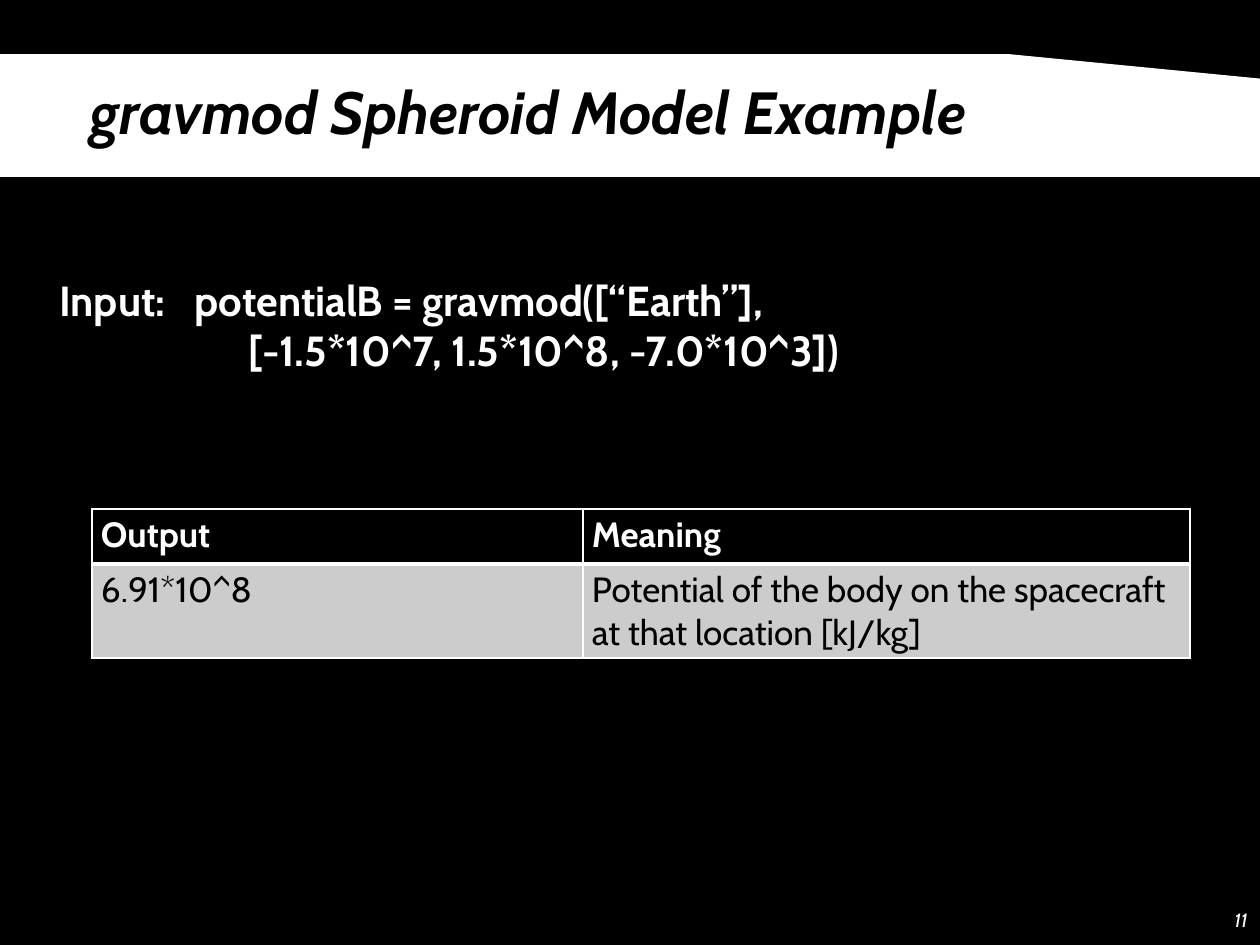
from lxml.etree import SubElement
from pptx import Presentation
from pptx.dml.color import RGBColor
from pptx.enum.shapes import MSO_SHAPE
from pptx.enum.text import MSO_ANCHOR, MSO_AUTO_SIZE, PP_ALIGN
from pptx.oxml.ns import qn
from pptx.util import Pt

PX = 914400 // 126
FONT = "Cabin"
BLACK, WHITE, GREY = "000000", "FFFFFF", "CCCCCC"

TITLE = "gravmod Spheroid Model Example"
PAGE_NUMBER = "11"
# text, left indent and tab stop in px
INPUT_LINES = [
    ("Input:\t potentialB = gravmod([“Earth”],", 0, 126),
    ("[-1.5*10^7, 1.5*10^8, -7.0*10^3])", 189, None),
]
TABLE_ROWS = [
    ("Output", "Meaning"),
    ("6.91*10^8", "Potential of the body on the spacecraft at that location [kJ/kg]"),
]
COLUMN_WIDTHS = (491, 607)
ROW_HEIGHTS = (55, 94)
# fill, text colour, bold, top border and bottom border in points
ROW_STYLES = [(BLACK, WHITE, True, 1, 3), (GREY, BLACK, False, 3, 1)]


def color(value):
    return RGBColor.from_string(value)


def place(*lengths):
    return [length * PX for length in lengths]


def style(para, size, shade, bold=False, italic=False):
    font = para.font
    font.name, font.size, font.bold, font.italic = FONT, Pt(size), bold, italic
    font.color.rgb = color(shade)


def add_borders(cell, top, bottom):
    properties = cell._tc.get_or_add_tcPr()
    for side, width in (("L", 1), ("R", 1), ("T", top), ("B", bottom)):
        line = SubElement(properties, qn(f"a:ln{side}"), w=str(Pt(width)))
        fill = SubElement(line, qn("a:solidFill"))
        SubElement(fill, qn("a:srgbClr"), val=WHITE)


def add_band(page):
    band = page.shapes.add_shape(MSO_SHAPE.FLOWCHART_CARD, *place(0, 54, 1260, 123))
    band.shadow.inherit = False
    band.fill.solid()
    band.fill.fore_color.rgb = color(WHITE)
    band.line.fill.background()
    band.element.spPr.find(qn("a:xfrm")).set("flipH", "1")
    # Keep the band behind the title
    page.shapes.title.element.addprevious(band.element)


def add_title(page):
    title = page.shapes.title
    title.left, title.top, title.width, title.height = place(78, 77, 1125, 123)
    frame = title.text_frame
    frame.text = TITLE
    frame.vertical_anchor = MSO_ANCHOR.TOP
    para = frame.paragraphs[0]
    para.alignment = PP_ALIGN.LEFT
    para.line_spacing = 0.9
    style(para, 34, BLACK, bold=True, italic=True)


def add_input(page):
    box = page.shapes.add_textbox(*place(47, 268, 1213, 115))
    frame = box.text_frame
    frame.word_wrap = True
    frame.auto_size = MSO_AUTO_SIZE.SHAPE_TO_FIT_TEXT
    for index, (text, indent, stop) in enumerate(INPUT_LINES):
        para = frame.add_paragraph() if index else frame.paragraphs[0]
        para.text = text
        style(para, 24, WHITE, bold=True)
        properties = para._p.get_or_add_pPr()
        properties.set("marL", str(indent * PX))
        if stop:
            tabs = properties.makeelement(qn("a:tabLst"))
            SubElement(tabs, qn("a:tab"), pos=str(stop * PX), algn="l")
            properties.find(qn("a:defRPr")).addprevious(tabs)


def add_output_table(page):
    size = sum(COLUMN_WIDTHS), sum(ROW_HEIGHTS)
    table = page.shapes.add_table(
        len(TABLE_ROWS), len(COLUMN_WIDTHS), *place(92, 509, *size)).table
    table.horz_banding = False
    for column, width in zip(table.columns, COLUMN_WIDTHS):
        column.width = width * PX
    for row, height, texts, look in zip(table.rows, ROW_HEIGHTS, TABLE_ROWS, ROW_STYLES):
        row.height = height * PX
        fill, shade, bold, top, bottom = look
        for cell, text in zip(row.cells, texts):
            cell.text = text
            cell.margin_left = cell.margin_right = 9 * PX
            cell.margin_top = cell.margin_bottom = 5 * PX
            add_borders(cell, top, bottom)
            cell.fill.solid()
            cell.fill.fore_color.rgb = color(fill)
            style(cell.text_frame.paragraphs[0], 20, shade, bold)


def add_page_number(page):
    box = page.shapes.add_textbox(*place(1203, 895, 57, 50))
    frame = box.text_frame
    frame.word_wrap = True
    frame.vertical_anchor = MSO_ANCHOR.MIDDLE
    frame.text = PAGE_NUMBER
    para = frame.paragraphs[0]
    para.alignment = PP_ALIGN.RIGHT
    style(para, 11, WHITE, italic=True)


def main():
    deck = Presentation()
    deck.slide_width, deck.slide_height = place(1260, 945)
    page = deck.slides.add_slide(deck.slide_layouts[5])
    page.background.fill.solid()
    page.background.fill.fore_color.rgb = color(BLACK)
    add_band(page)
    add_title(page)
    add_input(page)
    add_output_table(page)
    add_page_number(page)
    deck.save("out.pptx")


if __name__ == "__main__":
    main()
